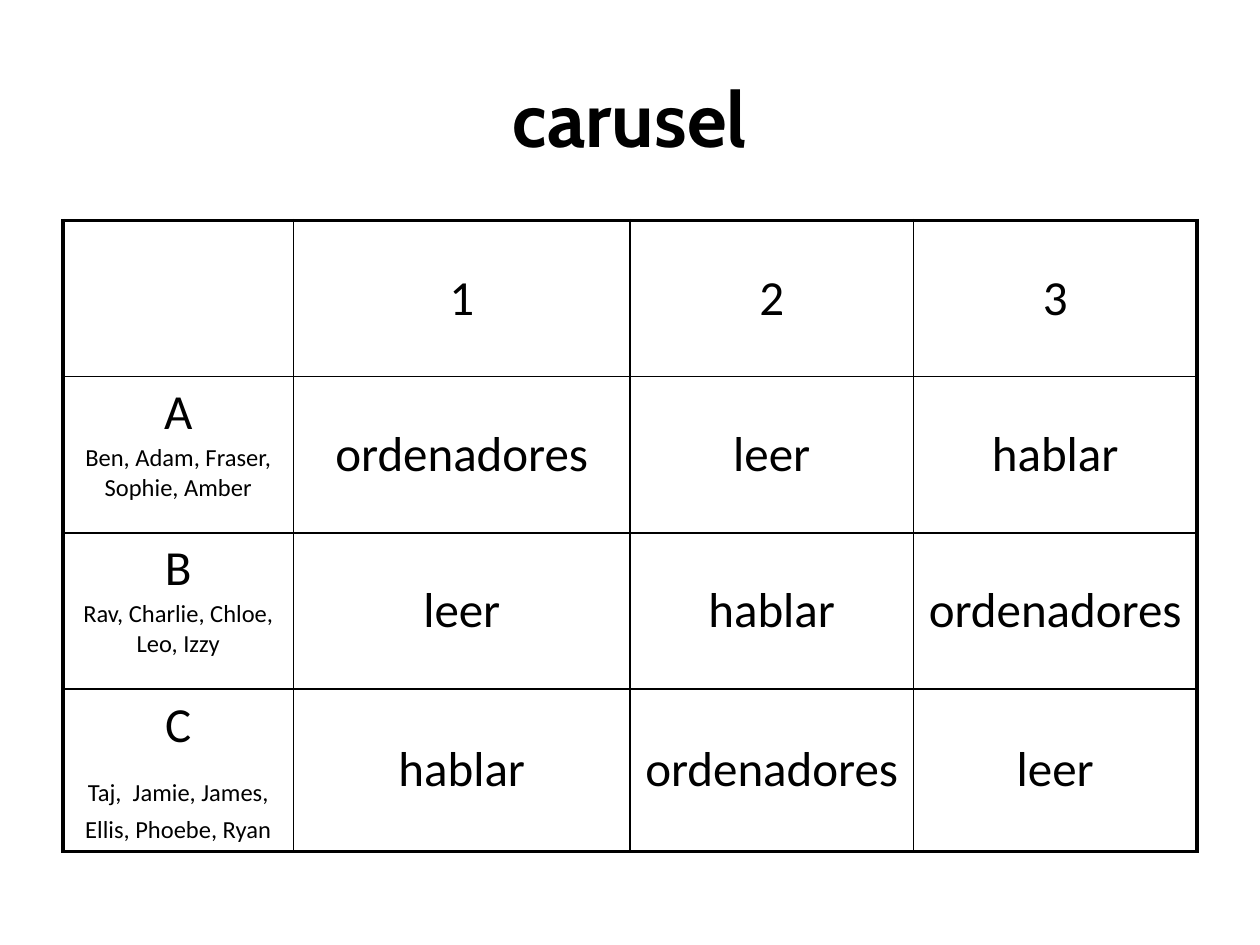
"""Builds the carousel slide: a rota of three groups over three activities."""
import pptx
import pptx.util
import pptx.dml.color
import pptx.enum.text
import pptx.oxml.ns
from lxml import etree

TITLE = "carusel"
SESSIONS = ["1", "2", "3"]
GROUPS = [
    ("A", ["Ben, Adam, Fraser, Sophie, Amber"], ["ordenadores", "leer", "hablar"]),
    ("B", ["Rav, Charlie, Chloe, Leo, Izzy"], ["leer", "hablar", "ordenadores"]),
    ("C", ["Taj,", " ", "Jamie, James, Ellis, Phoebe, Ryan"], ["hablar", "ordenadores", "leer"]),
]
COLORS = {"ink": "000000"}
COLUMN_WIDTHS = [1.83, 2.67, 2.25, 2.25]
ROW_HEIGHT = 1.24
MARGIN = 0.5
THIN, THICK = 1, 2.25
LARGE, SMALL = 28, 14

Inches, Pt = pptx.util.Inches, pptx.util.Pt
INK = pptx.dml.color.RGBColor.from_string(COLORS["ink"])
MIDDLE = pptx.enum.text.MSO_ANCHOR.MIDDLE


def add_xml(parent, tag, **attributes):
    return etree.SubElement(parent, pptx.oxml.ns.qn(tag), **attributes)


def style(paragraph, typeface, size, bold=False):
    paragraph.alignment = pptx.enum.text.PP_ALIGN.CENTER
    paragraph.font.name = typeface
    paragraph.font.size = Pt(size)
    paragraph.font.bold = bold
    paragraph.font.color.rgb = INK


def style_entry(paragraph):
    style(paragraph, "Calibri", LARGE)
    properties = paragraph._p.get_or_add_pPr()
    spacing = add_xml(properties, "a:spcBef")
    add_xml(spacing, "a:spcPct", val="20000")
    properties.insert(0, spacing)


def set_borders(cell, widths):
    properties = cell._tc.get_or_add_tcPr()
    for side, width in widths.items():
        line = add_xml(properties, f"a:ln{side}", w=str(Pt(width)))
        add_xml(add_xml(line, "a:solidFill"), "a:srgbClr", val=COLORS["ink"])


def write_group(cell, letter, names):
    paragraph = cell.text_frame.paragraphs[0]
    paragraph.add_run().text = letter
    paragraph.add_line_break()
    for part in names:
        run = paragraph.add_run()
        run.text = part
        if part.strip():
            run.font.size = Pt(SMALL)
    style_entry(paragraph)


def write_entry(cell, text):
    cell.vertical_anchor = MIDDLE
    cell.text = text
    style_entry(cell.text_frame.paragraphs[0])


def build():
    presentation = pptx.Presentation()
    presentation.slide_width, presentation.slide_height = Inches(10), Inches(7.5)
    slide = presentation.slides.add_slide(presentation.slide_layouts[5])

    title = slide.shapes.title
    title.left, title.top = Inches(MARGIN), Inches(0.3)
    title.width, title.height = Inches(sum(COLUMN_WIDTHS)), Inches(1.25)
    title.text_frame.text = TITLE
    title.text_frame.vertical_anchor = MIDDLE
    style(title.text_frame.paragraphs[0], "Cabin", 44, bold=True)

    row_count, column_count = len(GROUPS) + 1, len(COLUMN_WIDTHS)
    rota = slide.shapes.add_table(
        row_count, column_count, Inches(MARGIN), Inches(1.75),
        Inches(sum(COLUMN_WIDTHS)), Inches(ROW_HEIGHT * row_count)).table
    rota.first_row = rota.horz_banding = False
    for column, width in zip(rota.columns, COLUMN_WIDTHS):
        column.width = Inches(width)
    for row in rota.rows:
        row.height = Inches(ROW_HEIGHT)

    for r in range(row_count):
        for c in range(column_count):
            cell = rota.cell(r, c)
            set_borders(cell, {
                "L": THICK if c == 0 else THIN,
                "R": THICK if c == column_count - 1 else THIN,
                "T": THICK if r == 0 else THIN,
                "B": THICK if r == row_count - 1 else THIN,
            })
            cell.fill.background()

    for c, session in enumerate(SESSIONS, 1):
        write_entry(rota.cell(0, c), session)
    for r, (letter, names, activities) in enumerate(GROUPS, 1):
        write_group(rota.cell(r, 0), letter, names)
        for c, activity in enumerate(activities, 1):
            write_entry(rota.cell(r, c), activity)

    presentation.save("out.pptx")


if __name__ == "__main__":
    build()
